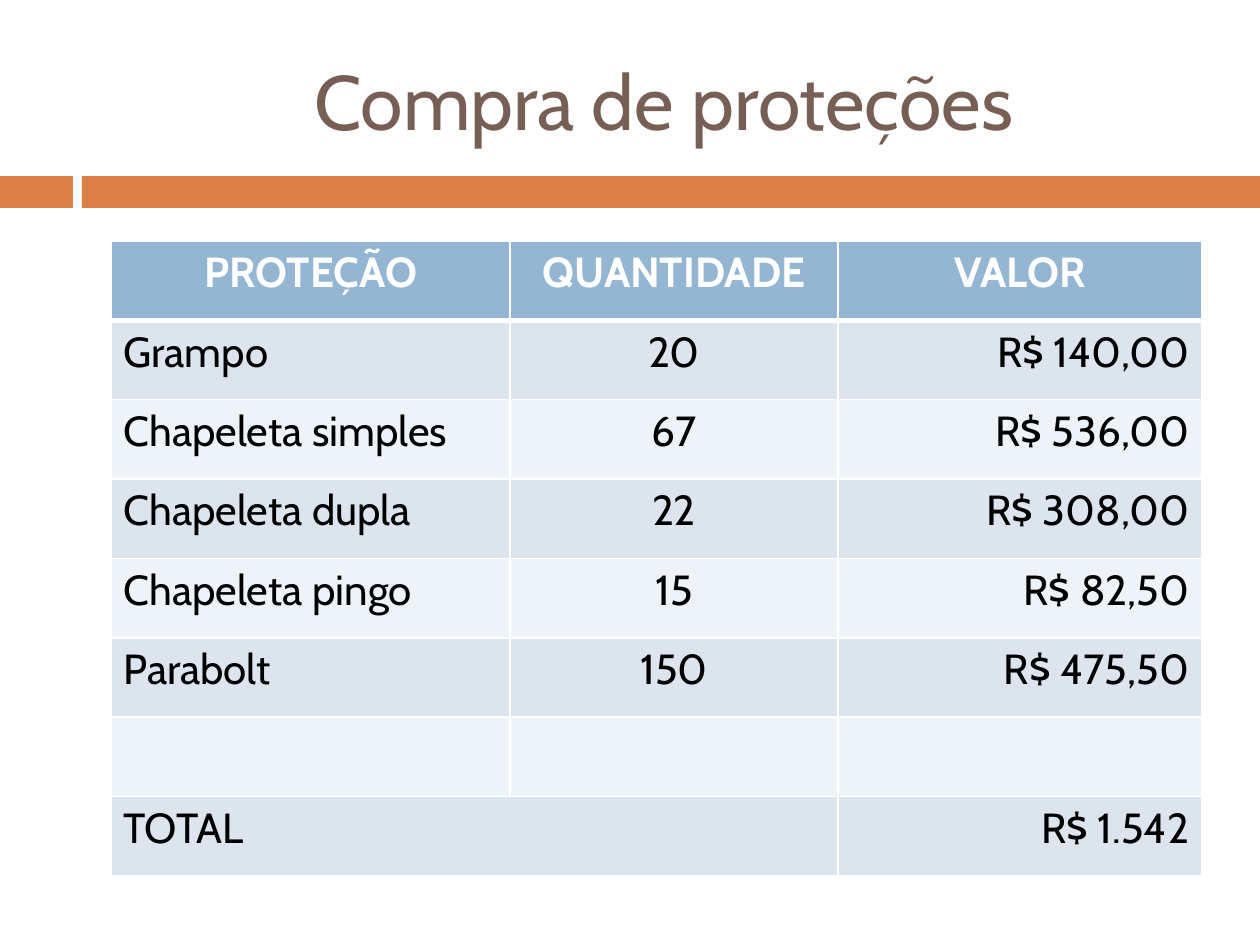
"""Build the slide listing climbing protection purchases and their cost."""
from lxml import etree
from pptx import Presentation, util as u
from pptx.dml.color import RGBColor
from pptx.enum import shapes, text
from pptx.oxml import ns

PX = u.Inches(1) / 126
FONT = "Cabin"
ORANGE = RGBColor(0xDD, 0x80, 0x47)
BROWN = RGBColor(0x77, 0x5F, 0x55)
BLUE = RGBColor(0x94, 0xB6, 0xD2)
BAND_DARK = RGBColor(0xDC, 0xE5, 0xEE)
BAND_LIGHT = RGBColor(0xEE, 0xF3, 0xF7)
WHITE = RGBColor(0xFF, 0xFF, 0xFF)
BLACK = RGBColor(0x00, 0x00, 0x00)


def px(*lengths):
    return [round(length * PX) for length in lengths]


def add_border(cell, side, points):
    line = etree.SubElement(cell._tc.get_or_add_tcPr(), ns.qn(f"a:ln{side}"), w=str(u.Pt(points)))
    fill = etree.SubElement(line, ns.qn("a:solidFill"))
    etree.SubElement(fill, ns.qn("a:srgbClr"), val=str(WHITE))


prs = Presentation()
prs.slide_width, prs.slide_height = px(1260, 945)
slide = prs.slides.add_slide(prs.slide_layouts[6])

for left, width in ((0, 73), (82, 1178)):
    stripe = slide.shapes.add_shape(shapes.MSO_SHAPE.RECTANGLE, *px(left, 176, width, 32))
    stripe.shadow.inherit = False
    stripe.fill.solid()
    stripe.fill.fore_color.rgb = ORANGE
    stripe.line.fill.background()

title = slide.shapes.add_textbox(*px(302, 32, 906, 136)).text_frame
title.word_wrap = True
title.vertical_anchor = text.MSO_ANCHOR.MIDDLE
title.text = "Compra de proteções"
title_font = title.paragraphs[0].runs[0].font
title_font.name, title_font.size, title_font.color.rgb = FONT, u.Pt(44), BROWN

purchases = [
    ("PROTEÇÃO", "QUANTIDADE", "VALOR"),
    ("Grampo", "20", "R$ 140,00"),
    ("Chapeleta simples", "67", "R$ 536,00"),
    ("Chapeleta dupla", "22", "R$ 308,00"),
    ("Chapeleta pingo", "15", "R$ 82,50"),
    ("Parabolt", "150", "R$ 475,50"),
    ("", "", ""),
    ("TOTAL", "", "R$ 1.542"),
]
alignments = (text.PP_ALIGN.LEFT, text.PP_ALIGN.CENTER, text.PP_ALIGN.RIGHT)
table = slide.shapes.add_table(len(purchases), 3, *px(111, 241, 1091, 635)).table
for column, width in zip(table.columns, px(399, 328, 364)):
    column.width = width

for r, purchase in enumerate(purchases):
    is_header = r == 0
    band = BLUE if is_header else BAND_DARK if r % 2 else BAND_LIGHT
    for c, entry in enumerate(purchase):
        cell = table.cell(r, c)
        for side in "LRTB":
            under_header = (r, side) in ((0, "B"), (1, "T"))
            add_border(cell, side, 3 if under_header else 1)
        cell.fill.solid()
        cell.fill.fore_color.rgb = band
        cell.text_frame.text = entry
        paragraph = cell.text_frame.paragraphs[0]
        paragraph.alignment = text.PP_ALIGN.CENTER if is_header else alignments[c]
        for run in paragraph.runs:
            run.font.name, run.font.size, run.font.bold = FONT, u.Pt(24), is_header
            run.font.color.rgb = WHITE if is_header else BLACK

table.cell(7, 0).merge(table.cell(7, 1))
prs.save("out.pptx")
